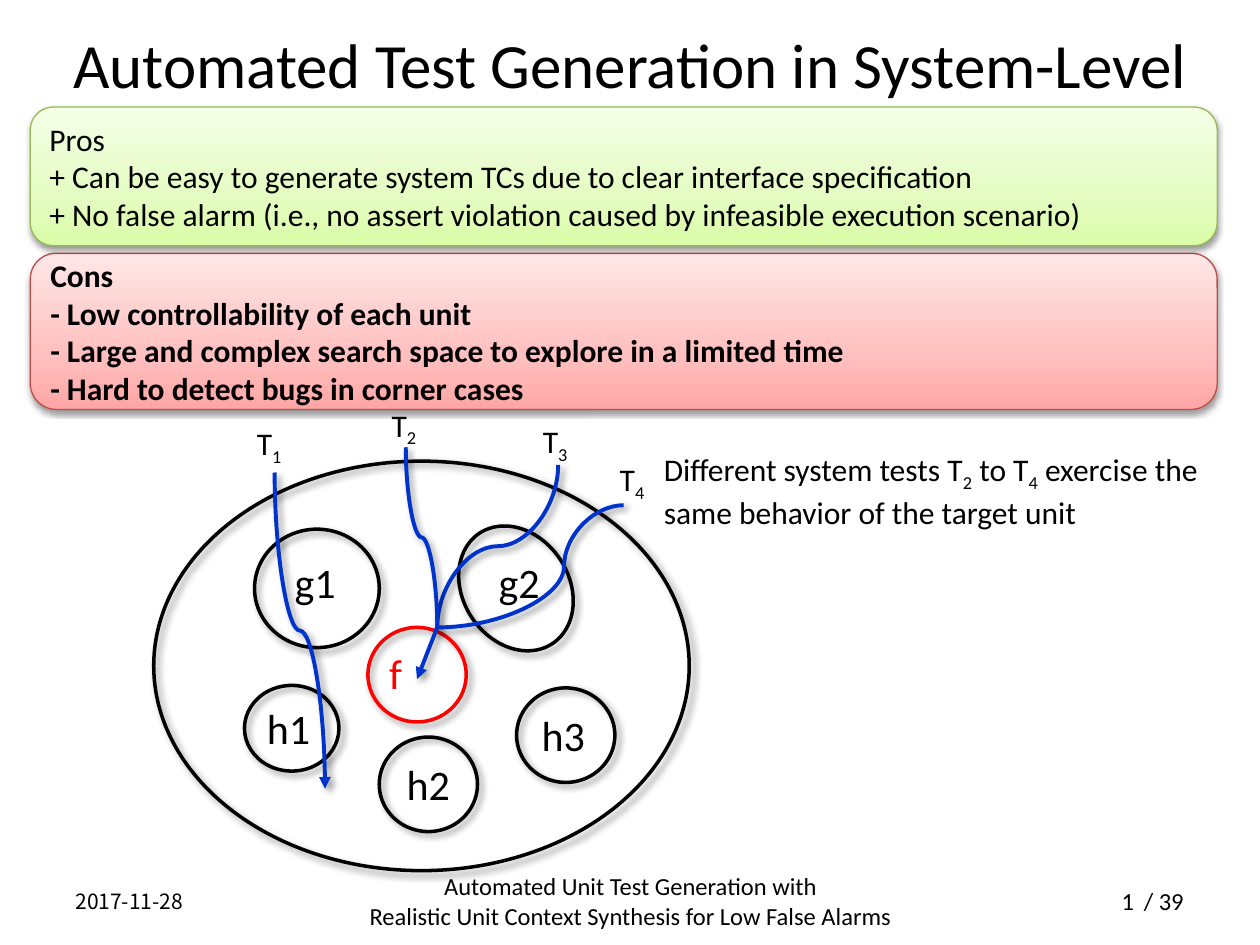
from copy import deepcopy

from lxml import etree
from pptx import Presentation
from pptx.dml.color import RGBColor
from pptx.enum.shapes import MSO_CONNECTOR, MSO_SHAPE
from pptx.enum.text import MSO_ANCHOR, PP_ALIGN
from pptx.oxml.ns import qn
from pptx.util import Inches, Pt

CURVE, STRAIGHT = MSO_CONNECTOR.CURVE, MSO_CONNECTOR.STRAIGHT
OVAL, ROUNDED = MSO_SHAPE.OVAL, MSO_SHAPE.ROUNDED_RECTANGLE
LEFT, CENTER, RIGHT = PP_ALIGN.LEFT, PP_ALIGN.CENTER, PP_ALIGN.RIGHT
TOP, MIDDLE = MSO_ANCHOR.TOP, MSO_ANCHOR.MIDDLE

FONT, DATE_FONT = "Calibri", "Noto Sans CJK KR"
BLACK, RED, BLUE = "000000", "FF0000", "0033CC"

# name, ellipse box, label position, rotation, colour; relative to the system
UNITS = [
    ("g2", (2.35, 0.59, 1.05, 0.84), (2.64, 0.71), 56.5, BLACK),
    ("f", (1.70, 1.32, 0.78, 0.75), (1.77, 1.43), 0, RED),
    ("h1", (0.72, 1.78, 0.75, 0.68), (0.80, 1.87), 0, BLACK),
    ("h2", (1.79, 2.19, 0.78, 0.75), (1.91, 2.31), 0, BLACK),
    ("h3", (2.88, 1.80, 0.78, 0.75), (2.98, 1.92), 0, BLACK),
    ("g1", (0.80, 0.54, 0.99, 0.94), (1.02, 0.71), 0, BLACK),
]
TEST_LABELS = [(0.72, -0.34), (1.79, -0.49), (2.99, -0.36), (3.60, -0.06)]
F_ENTRY = (2.25, 1.32)

PROS = [
    "Pros",
    "+ Can be easy to generate system TCs due to clear interface specification",
    "+ No false alarm (i.e., no assert violation caused by infeasible execution scenario)",
]
CONS = [
    "Cons",
    "- Low controllability of each unit",
    "- Large and complex search space to explore in a limited time",
    "- Hard to detect bugs in corner cases",
]


def rgb(value):
    return RGBColor.from_string(value)


def add_shadow(s, alpha=40, blur=4, dist=3, angle=45):
    sp_pr = s._element.spPr
    effects = etree.SubElement(sp_pr, qn("a:effectLst"))
    shadow = etree.SubElement(effects, qn("a:outerShdw"), blurRad=str(Pt(blur)),
                              dist=str(Pt(dist)), dir=str(angle * 60000),
                              algn="tl", rotWithShape="0")
    color = etree.SubElement(shadow, qn("a:srgbClr"), val=BLACK)
    etree.SubElement(color, qn("a:alpha"), val=str(alpha * 1000))


def set_line(s, color, width):
    s.line.color.rgb = rgb(color)
    s.line.width = Pt(width)


def style_run(r, size, color=BLACK, font=FONT, bold=None):
    r.font.size = Pt(size)
    r.font.name = font
    r.font.bold = bold
    r.font.color.rgb = rgb(color)


def fill_text(tf, lines, size, color=BLACK, font=FONT, align=LEFT, anchor=TOP, bold=None):
    """Write lines; every second piece between bars is a subscript."""
    tf.word_wrap = True
    tf.vertical_anchor = anchor
    for i, line in enumerate(lines):
        p = tf.add_paragraph() if i else tf.paragraphs[0]
        p.alignment = align
        for j, piece in enumerate(line.split("|")):
            if piece:
                r = p.add_run()
                r.text = piece
                style_run(r, size, color, font, bold)
                if j % 2:
                    r.font._element.set("baseline", "-25000")


def add_text(slide, box, lines, size, **style):
    s = slide.shapes.add_textbox(*map(Inches, box))
    fill_text(s.text_frame, lines, size, **style)
    return s


def add_ellipse(slide, box, color, rotation=0):
    s = slide.shapes.add_shape(OVAL, *map(Inches, box))
    s.rotation = rotation
    s.fill.background()
    set_line(s, color, 2)
    add_shadow(s)


def add_path(slide, start, end, kind=CURVE, vertical=False, arrow=False, bend=None):
    """Connect two points; a vertical curve leaves and arrives vertically."""
    (x1, y1), (x2, y2) = start, end
    turn = 0
    if vertical:
        side = 1 if x2 < x1 else -1
        turn = 90 if side > 0 else 270
        cx, cy = (x1 + x2) / 2, (y1 + y2) / 2
        half_w, half_h = side * (y2 - y1) / 2, side * (x1 - x2) / 2
        x1, y1, x2, y2 = cx - half_w, cy - half_h, cx + half_w, cy + half_h
    s = slide.shapes.add_connector(kind, *map(Inches, (x1, y1, x2, y2)))
    sp_pr = s._element.spPr
    if turn:
        sp_pr.find(qn("a:xfrm")).set("rot", str(turn * 60000))
    if bend is not None:
        guides = sp_pr.find(qn("a:prstGeom")).find(qn("a:avLst"))
        etree.SubElement(guides, qn("a:gd"), name="adj1", fmla=f"val {round(bend * 100000)}")
    set_line(s, BLUE, 2.25)
    if arrow:
        etree.SubElement(sp_pr.find(qn("a:ln")), qn("a:tailEnd"), type="triangle")
    add_shadow(s)


def add_title(slide, box):
    s = slide.shapes.title
    s.left, s.top, s.width, s.height = map(Inches, box)
    fill_text(s.text_frame, ["Automated Test Generation in System-Level"], 36,
              align=CENTER, anchor=MIDDLE)


def add_footer(slide, box):
    x, y, w, h = box
    add_text(slide, (x, y, 1.11, h), ["2017-11-28"], 12, font=DATE_FONT, anchor=MIDDLE)
    add_text(slide, (x + 1.11, y, 6.79, h),
             ["Automated Unit Test Generation with",
              "Realistic Unit Context Synthesis for Low False Alarms"],
             14, align=CENTER, anchor=MIDDLE)
    add_text(slide, (x + 8.04, y, 0.56, h), ["1"], 14, align=RIGHT, anchor=MIDDLE)
    add_text(slide, (x + w - 0.94, y + 0.03, 0.94, 0.34), ["/ 39"], 14)


def add_system(slide, box):
    """The system under test, its units and the tests that run through it."""
    x, y, w, h = box

    def at(point):
        return x + point[0], y + point[1]

    add_ellipse(slide, box, BLACK)
    for _, unit, _, rotation, color in UNITS:
        add_ellipse(slide, at(unit) + unit[2:], color, rotation)
    entry = at(F_ENTRY)
    add_path(slide, at((0.96, 0.09)), at((1.36, 2.60)), vertical=True, arrow=True)
    add_path(slide, at((3.21, 0.03)), entry, vertical=True)
    add_path(slide, at((2.00, -0.11)), entry, vertical=True)
    add_path(slide, at((3.73, 0.35)), entry, bend=0.32)
    add_path(slide, entry, at((2.09, 1.73)), kind=STRAIGHT, arrow=True)
    for number, point in enumerate(TEST_LABELS, 1):
        add_text(slide, at(point) + (0.49, 0.40), [f"T|{number}"], 18)
    for name, _, point, _, color in UNITS:
        width = 0.56 if len(name) > 1 else 0.38
        add_text(slide, at(point) + (width, 0.50), [name], 24, color=color)


def add_panel(slide, box, lines, gradient, outline, bold=None):
    s = slide.shapes.add_shape(ROUNDED, *map(Inches, box))
    s.fill.gradient()
    s.fill.gradient_angle = 90
    first = s._element.spPr.find(qn("a:gradFill")).find(qn("a:gsLst"))[0]
    first.addnext(deepcopy(first))
    for stop, position, color in zip(s.fill.gradient_stops, (0, 0.35, 1), gradient):
        stop.position = position
        stop.color.rgb = rgb(color)
    set_line(s, outline, 0.75)
    add_shadow(s, 38, 3.1, 1.6, 90)
    fill_text(s.text_frame, lines, 18, anchor=MIDDLE, bold=bold)


def main():
    prs = Presentation()
    prs.slide_width, prs.slide_height = Inches(10), Inches(7.5)
    slide = prs.slides.add_slide(prs.slide_layouts[5])
    add_title(slide, (0, -0.01, 10, 1.02))
    add_footer(slide, (0.5, 6.95, 9.42, 0.4))
    add_system(slide, (1.22, 3.66, 4.25, 3.25))
    add_text(slide, (5.17, 3.52, 4.81, 0.71),
             ["Different system tests T|2| to T|4| exercise the same behavior of the target unit"], 18)
    add_panel(slide, (0.24, 2.01, 9.42, 1.24), CONS,
              ("FFA6A5", "FFC0BF", "FFE7E7"), "BF4C48", bold=True)
    add_panel(slide, (0.24, 0.85, 9.42, 1.10), PROS,
              ("DAFDA7", "E4FCC2", "F5FFE7"), "98B955")
    prs.save("out.pptx")


if __name__ == "__main__":
    main()
